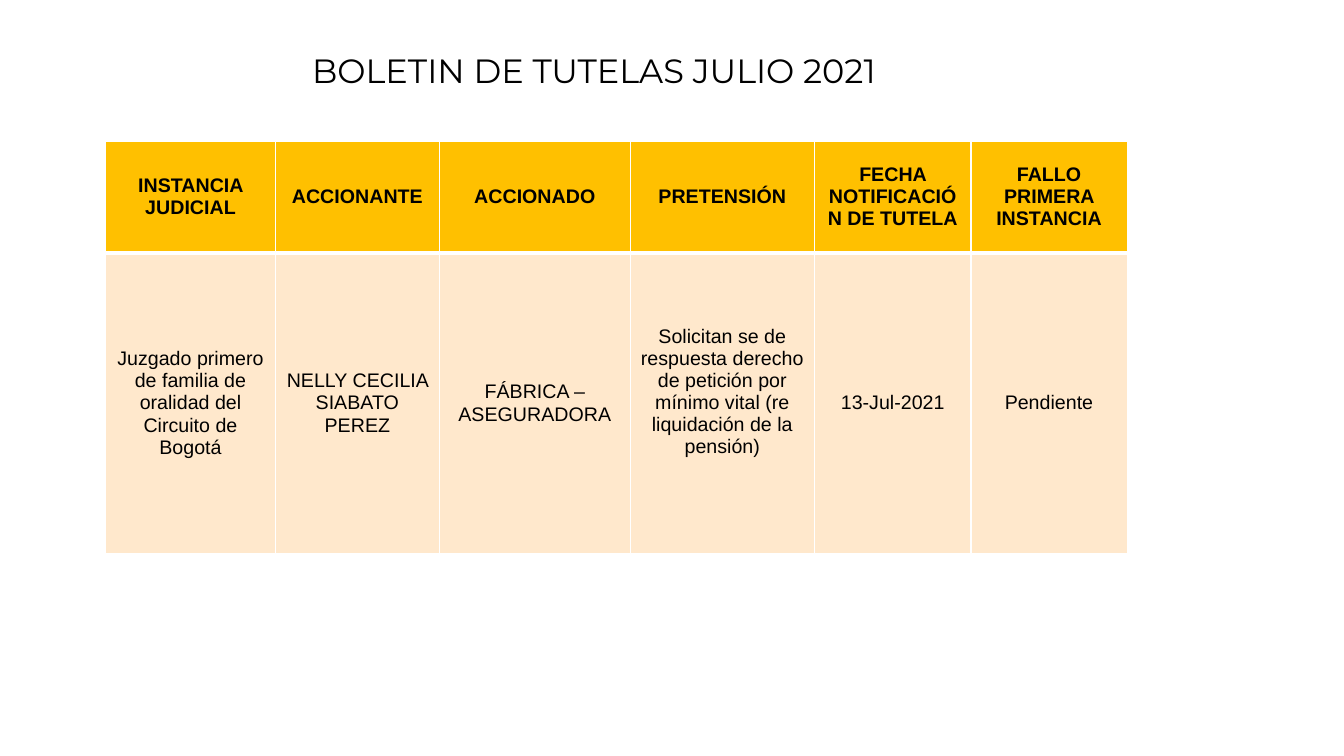
from lxml.etree import SubElement
from pptx import Presentation
from pptx.dml.color import RGBColor
from pptx.enum.text import MSO_ANCHOR as Anchor, PP_ALIGN as Align
from pptx.oxml.ns import qn
from pptx.util import Inches, Pt

BLACK = RGBColor(0, 0, 0)
WHITE = RGBColor(0xFF, 0xFF, 0xFF)
AMBER = RGBColor(0xFF, 0xC0, 0x00)
CREAM = RGBColor(0xFF, 0xE8, 0xCC)

TITLE_BOX = (0.31, 0.49, 11.16, 0.67)
TABLE_BOX = (1.05, 1.4, 10.13, 4.09)
COLUMN_WIDTHS = (1.68, 1.63, 1.89, 1.83, 1.55, 1.55)
ROW_HEIGHTS = (1.11, 2.98)
PETITION_COLUMN = 3

ROWS = (
    ("INSTANCIA JUDICIAL", "ACCIONANTE", "ACCIONADO", "PRETENSIÓN",
     "FECHA NOTIFICACIÓN DE TUTELA", "FALLO PRIMERA INSTANCIA"),
    ("Juzgado primero de familia de oralidad del Circuito de Bogotá",
     "NELLY CECILIA SIABATO PEREZ", "FÁBRICA – ASEGURADORA",
     "Solicitan se de respuesta derecho de petición por mínimo vital "
     "(re liquidación de la pensión)",
     "13-Jul-2021", "Pendiente"),
)


def set_font(para, name, size, bold=False):
    para.alignment = Align.CENTER
    para.font.name = name
    para.font.size = Pt(size)
    para.font.bold = bold
    para.font.color.rgb = BLACK


def set_borders(cell, widths):
    """Draw white borders; widths maps each side (L, R, T, B) to points."""
    properties = cell._tc.get_or_add_tcPr()
    for position, side in enumerate("LRTB"):
        line = SubElement(properties, qn(f"a:ln{side}"), w=str(Pt(widths[side])))
        fill = SubElement(line, qn("a:solidFill"))
        SubElement(fill, qn("a:srgbClr"), val=str(WHITE))
        properties.insert(position, line)


def add_title(page, box):
    title = page.shapes.title
    title.left, title.top, title.width, title.height = map(Inches, box)
    frame = title.text_frame
    frame.text = "BOLETIN DE TUTELAS JULIO 2021"
    frame.word_wrap = True
    frame.vertical_anchor = Anchor.TOP
    para = frame.paragraphs[0]
    para.line_spacing = 0.9
    set_font(para, "Montserrat", 24)


def add_rulings_table(page, box):
    table = page.shapes.add_table(
        len(ROWS), len(COLUMN_WIDTHS), *map(Inches, box)).table
    for column, width in zip(table.columns, COLUMN_WIDTHS):
        column.width = Inches(width)
    for row, height in zip(table.rows, ROW_HEIGHTS):
        row.height = Inches(height)

    for row_index, texts in enumerate(ROWS):
        is_header = row_index == 0
        # The header is set off from the body by a thicker rule
        borders = {"L": 1, "R": 1, "T": 1 if is_header else 3,
                   "B": 3 if is_header else 1}
        for column_index, text in enumerate(texts):
            cell = table.cell(row_index, column_index)
            cell.text = text
            cell.vertical_anchor = Anchor.MIDDLE
            cell.fill.solid()
            cell.fill.fore_color.rgb = AMBER if is_header else CREAM
            set_borders(cell, borders)
            set_font(cell.text_frame.paragraphs[0], "Arial", 14, is_header)

    # The petition sits half a line above the middle
    table.cell(1, PETITION_COLUMN).margin_bottom = Inches(0.27)


def main():
    deck = Presentation()
    deck.slide_width, deck.slide_height = Inches(13.33), Inches(7.5)
    page = deck.slides.add_slide(deck.slide_layouts.get_by_name("Title Only"))
    add_rulings_table(page, TABLE_BOX)
    add_title(page, TITLE_BOX)
    deck.save("out.pptx")


if __name__ == "__main__":
    main()
